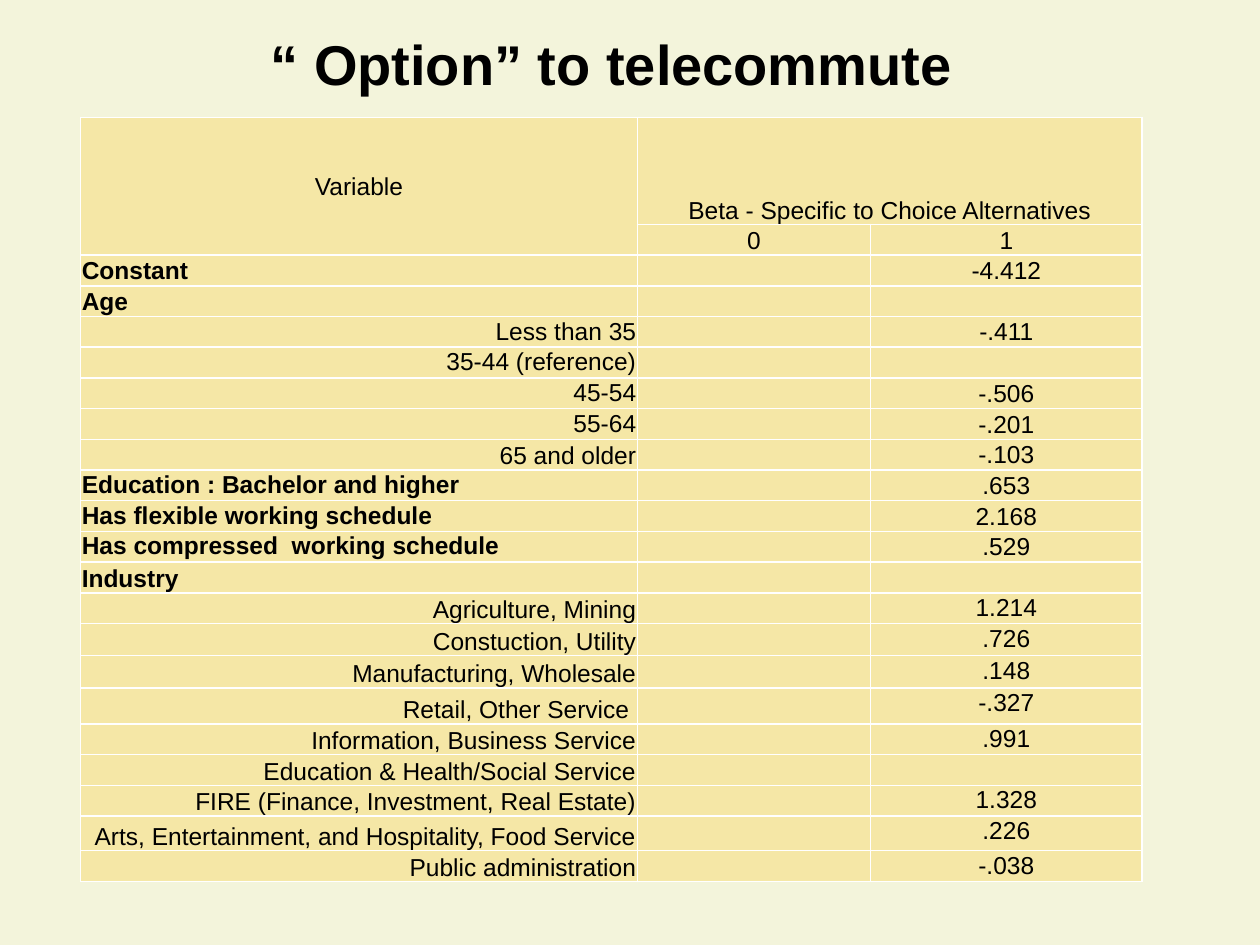
import lxml.etree
import pptx
import pptx.dml.color
import pptx.enum.text
import pptx.oxml.ns
import pptx.util

Pt = pptx.util.Pt
ALIGN = pptx.enum.text.PP_ALIGN
ANCHOR = pptx.enum.text.MSO_ANCHOR
TOP, MIDDLE, BOTTOM = ANCHOR.TOP, ANCHOR.MIDDLE, ANCHOR.BOTTOM
qn = pptx.oxml.ns.qn

FONT = "Arial"
TABLE_SIZE = 14
ROW_HEIGHT = 17.4
COLUMN_WIDTHS = [318.3, 133.2, 155.2]

# label, is a heading, label anchor, coefficient, coefficient anchor, row height
VARIABLES = [
    ("Constant", True, MIDDLE, "-4.412", MIDDLE, ROW_HEIGHT),
    ("Age", True, MIDDLE, "", MIDDLE, ROW_HEIGHT),
    ("Less than 35", False, TOP, "-.411", MIDDLE, ROW_HEIGHT),
    ("35-44 (reference)", False, TOP, "", MIDDLE, ROW_HEIGHT),
    ("45-54", False, TOP, "-.506", MIDDLE, ROW_HEIGHT),
    ("55-64", False, TOP, "-.201", MIDDLE, ROW_HEIGHT),
    ("65 and older", False, BOTTOM, "-.103", MIDDLE, ROW_HEIGHT),
    ("Education : Bachelor and higher", True, TOP, ".653", MIDDLE, ROW_HEIGHT),
    ("Has flexible working schedule", True, TOP, "2.168", MIDDLE, ROW_HEIGHT),
    ("Has compressed  working schedule", True, TOP, ".529", MIDDLE, ROW_HEIGHT),
    ("Industry", True, BOTTOM, "", TOP, ROW_HEIGHT),
    ("Agriculture, Mining", False, BOTTOM, "1.214", TOP, ROW_HEIGHT),
    ("Constuction, Utility", False, BOTTOM, ".726", TOP, 18.4),
    ("Manufacturing, Wholesale", False, BOTTOM, ".148", TOP, 18.4),
    ("Retail, Other Service ", False, BOTTOM, "-.327", TOP, 20.6),
    ("Information, Business Service", False, BOTTOM, ".991", TOP, ROW_HEIGHT),
    ("Education & Health/Social Service", False, BOTTOM, "", TOP, ROW_HEIGHT),
    ("FIRE (Finance, Investment, Real Estate)", False, BOTTOM, "1.328", TOP, ROW_HEIGHT),
    ("Arts, Entertainment, and Hospitality, Food Service", False, BOTTOM, ".226", TOP, 19.8),
    ("Public administration", False, BOTTOM, "-.038", TOP, ROW_HEIGHT),
]


def set_color(color, hex_string):
    color.rgb = pptx.dml.color.RGBColor.from_string(hex_string)


def add_run(paragraph, text, size, bold=False):
    run = paragraph.add_run()
    run.text = text
    run.font.name = FONT
    run.font.size = Pt(size)
    run.font.bold = bold
    set_color(run.font.color, "000000")


def style_cell(cell):
    cell.margin_left = cell.margin_right = cell.margin_top = Pt(0.72)
    cell.margin_bottom = Pt(0)
    properties = cell._tc.get_or_add_tcPr()
    # White borders come before the fill in the cell properties
    for side in ("a:lnL", "a:lnR", "a:lnT", "a:lnB"):
        border = lxml.etree.SubElement(properties, qn(side), w=str(Pt(1)))
        paint = lxml.etree.SubElement(border, qn("a:solidFill"))
        lxml.etree.SubElement(paint, qn("a:srgbClr"), val="FFFFFF")
    # Translucent amber fill
    cell.fill.solid()
    set_color(cell.fill.fore_color, "FFC000")
    tint = properties.find(qn("a:solidFill")).find(qn("a:srgbClr"))
    lxml.etree.SubElement(tint, qn("a:alpha"), val="24000")
    # Keeps empty cells as low as the filled ones
    lxml.etree.SubElement(cell.text_frame.paragraphs[0]._p, qn("a:endParaRPr"),
                          sz=str(TABLE_SIZE * 100))


def write_cell(cell, text, align, anchor, bold=False):
    cell.vertical_anchor = anchor
    if text:
        paragraph = cell.text_frame.paragraphs[0]
        paragraph.alignment = align
        add_run(paragraph, text, TABLE_SIZE, bold)


def place_title(slide, left, top, width, height):
    title = slide.shapes.title
    title.left, title.top, title.width, title.height = (
        Pt(left), Pt(top), Pt(width), Pt(height))
    frame = title.text_frame
    frame.word_wrap = False
    frame.auto_size = pptx.enum.text.MSO_AUTO_SIZE.SHAPE_TO_FIT_TEXT
    frame.vertical_anchor = TOP
    paragraph = frame.paragraphs[0]
    paragraph.alignment = ALIGN.CENTER
    add_run(paragraph, "“ Option” to telecommute", 32, bold=True)


def place_coefficients(slide, left, top):
    heights = [61.2, ROW_HEIGHT] + [variable[-1] for variable in VARIABLES]
    coefficients = slide.shapes.add_table(
        len(heights), len(COLUMN_WIDTHS), Pt(left), Pt(top),
        Pt(sum(COLUMN_WIDTHS)), Pt(sum(heights))).table
    coefficients.first_row = coefficients.horz_banding = False
    for column, width in zip(coefficients.columns, COLUMN_WIDTHS):
        column.width = Pt(width)
    for row, height in zip(coefficients.rows, heights):
        row.height = Pt(height)
        for cell in row.cells:
            style_cell(cell)

    # Two-row heading
    coefficients.cell(0, 0).merge(coefficients.cell(1, 0))
    coefficients.cell(0, 1).merge(coefficients.cell(0, 2))
    write_cell(coefficients.cell(0, 0), "Variable", ALIGN.CENTER, MIDDLE)
    write_cell(coefficients.cell(0, 1), "Beta - Specific to Choice Alternatives",
               ALIGN.CENTER, BOTTOM)
    for column, choice in enumerate(("0", "1"), start=1):
        write_cell(coefficients.cell(1, column), choice, ALIGN.CENTER, BOTTOM)

    # One row per variable
    for row, variable in enumerate(VARIABLES, start=2):
        label, heading, label_anchor, beta, beta_anchor, _ = variable
        write_cell(coefficients.cell(row, 0), label,
                   ALIGN.LEFT if heading else ALIGN.RIGHT, label_anchor, heading)
        write_cell(coefficients.cell(row, 2), beta, ALIGN.CENTER, beta_anchor)


def main():
    deck = pptx.Presentation()
    deck.slide_width, deck.slide_height = Pt(720), Pt(540)
    slide = deck.slides.add_slide(deck.slide_layouts[5])
    background = slide.background.fill
    background.solid()
    set_color(background.fore_color, "F3F4DB")
    place_title(slide, 146, 13, 407, 46)
    place_coefficients(slide, 46, 67)
    deck.save("out.pptx")


if __name__ == "__main__":
    main()
